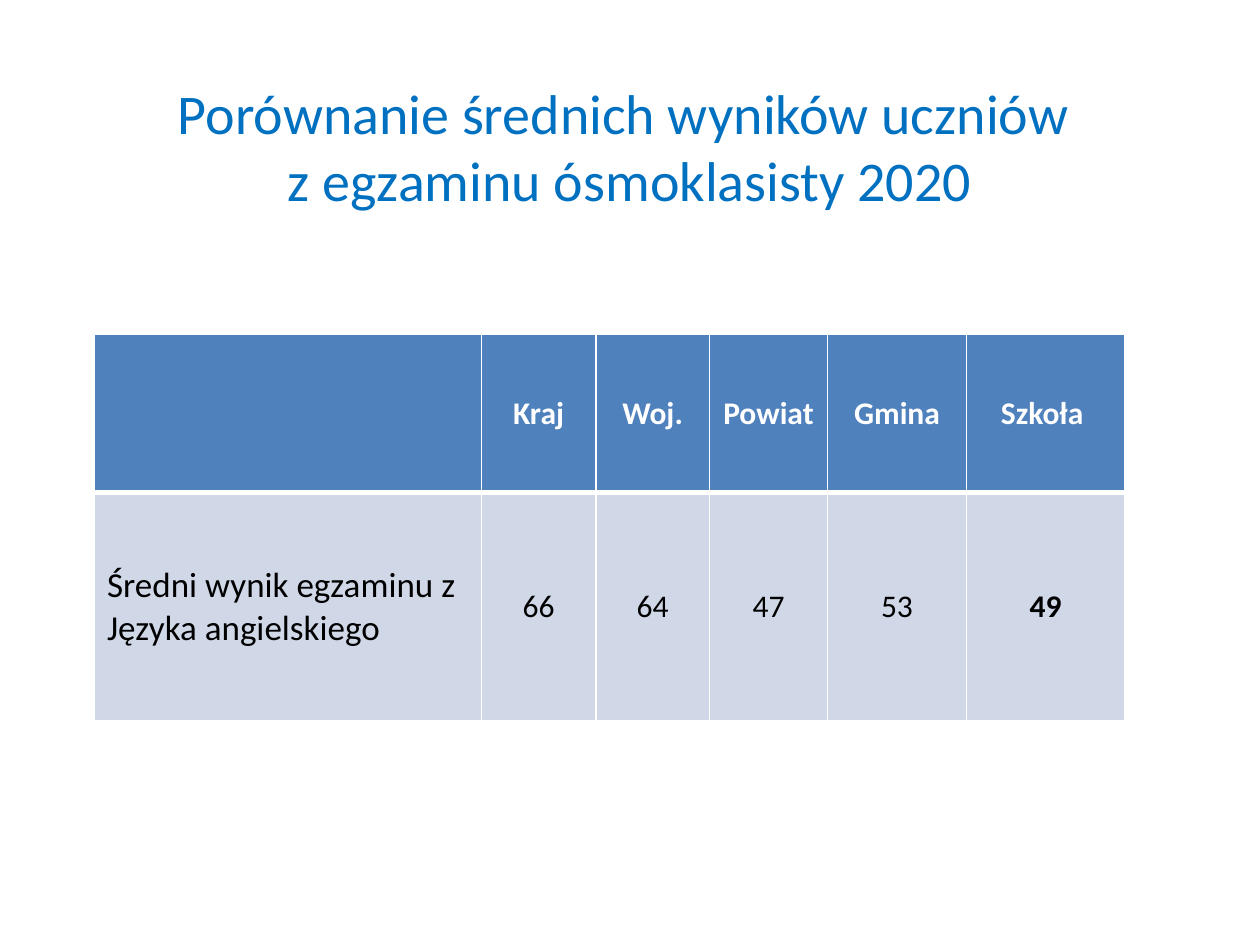
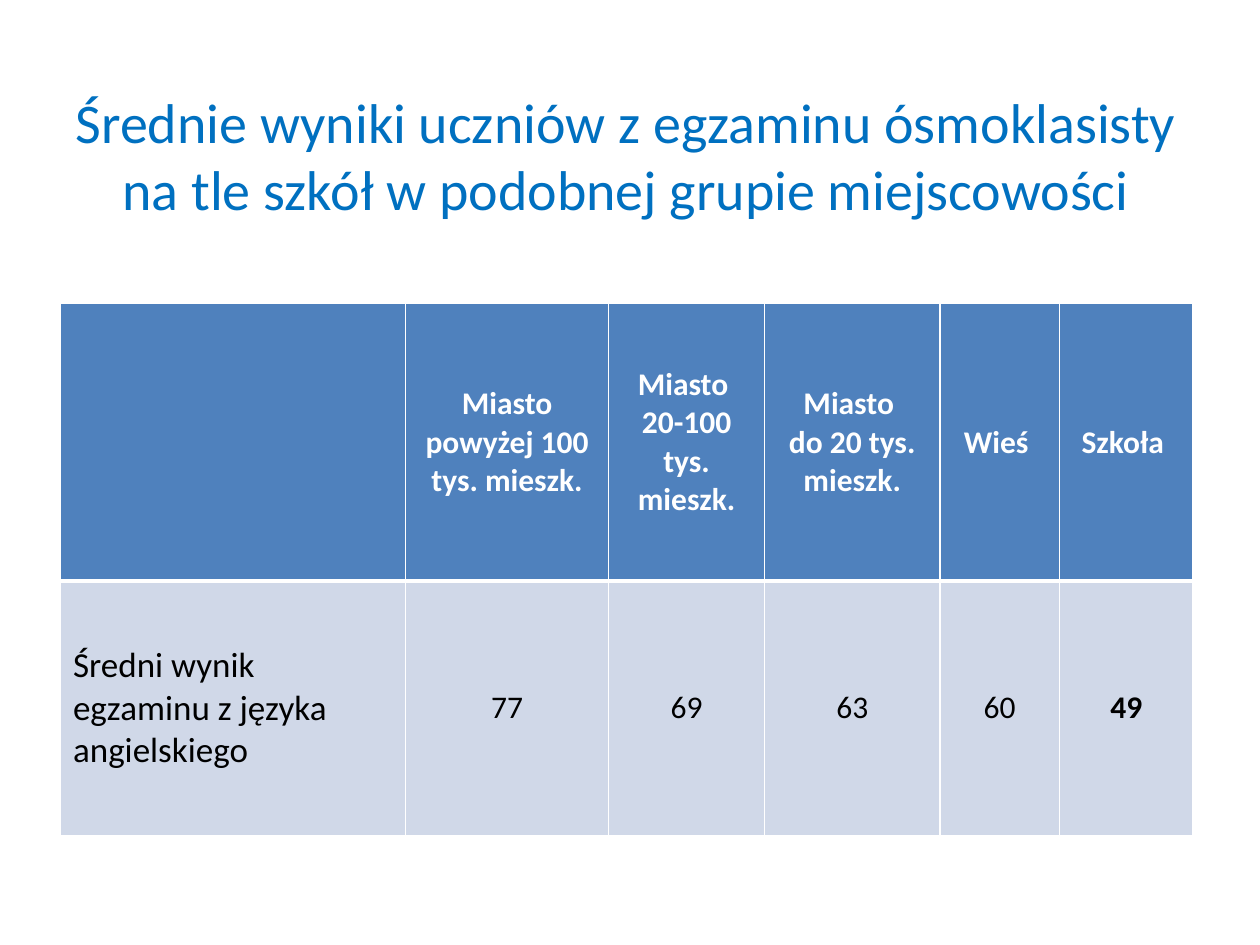
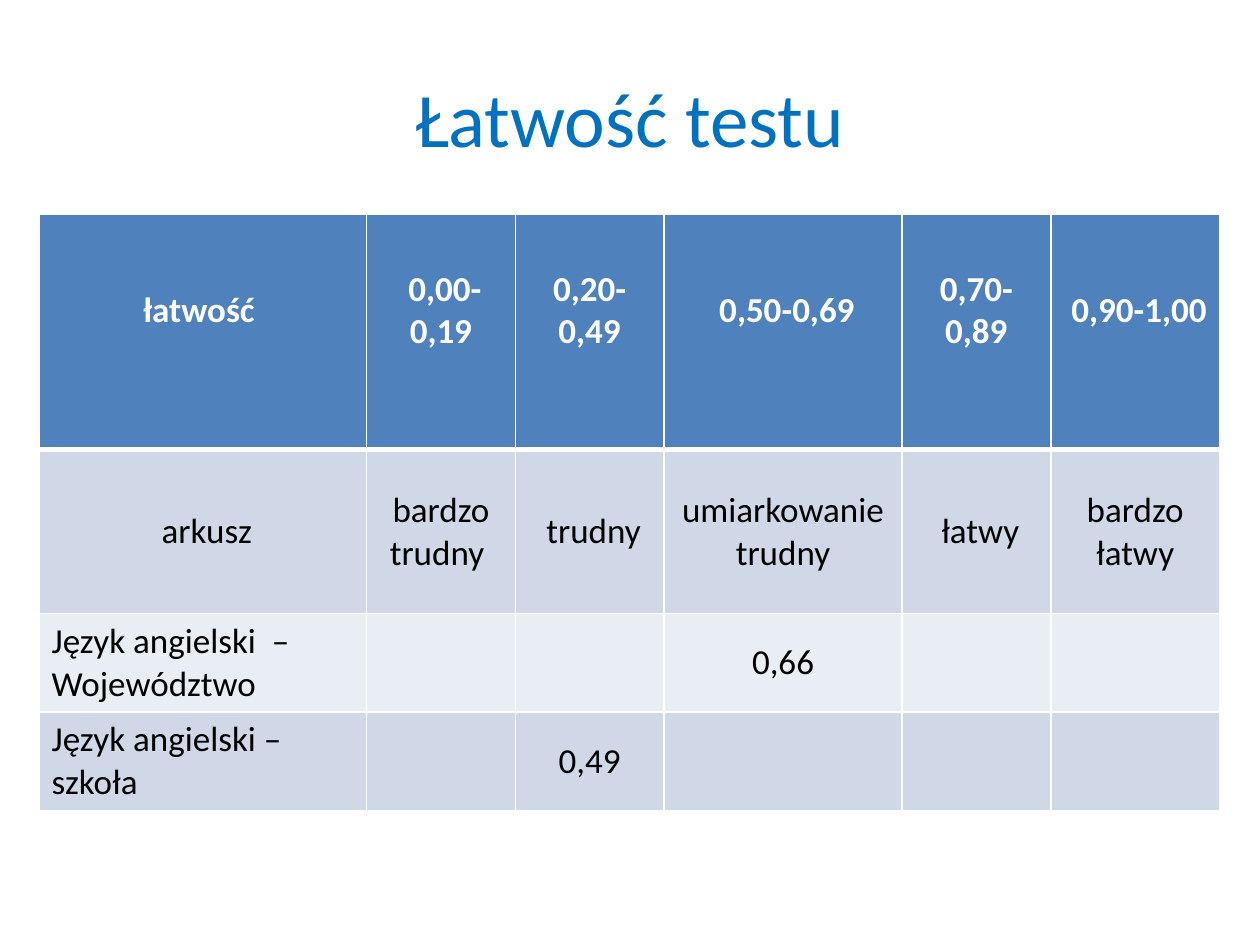
from lxml import etree
from pptx import Presentation
from pptx import util as u
from pptx.dml.color import RGBColor
from pptx.enum import text
from pptx.oxml import ns

FONT = "Calibri"
TITLE_BLUE = RGBColor(0x00, 0x70, 0xC0)
HEADER_BLUE = RGBColor(0x4F, 0x81, 0xBD)
BAND_DARK = RGBColor(0xD0, 0xD8, 0xE8)
BAND_LIGHT = RGBColor(0xE9, 0xED, 0xF4)
WHITE = RGBColor(0xFF, 0xFF, 0xFF)
BLACK = RGBColor(0x00, 0x00, 0x00)

TITLE_ONLY = 5
THIN, THICK = 1, 3


def write(frame, content, size, color, bold=False, align=text.PP_ALIGN.CENTER):
    """Fill a text frame; a vertical tab in the content breaks the line."""
    frame.text = content
    for para in frame.paragraphs:
        para.alignment = align
        for span in para.runs:
            font = span.font
            font.name, font.size, font.bold = FONT, u.Pt(size), bold
            font.color.rgb = color


def add_titled_slide(deck, title, left, top, size=32):
    page = deck.slides.add_slide(deck.slide_layouts[TITLE_ONLY])
    box = page.shapes.title
    box.left, box.top = u.Inches(left), u.Inches(top)
    box.width, box.height = u.Inches(9), u.Inches(1.25)
    write(box.text_frame, title, size, TITLE_BLUE)
    box.text_frame.auto_size = text.MSO_AUTO_SIZE.NONE
    box.text_frame.vertical_anchor = text.MSO_ANCHOR.MIDDLE
    return page


def set_borders(cell, top, bottom):
    """White rules on all sides, with the given top and bottom widths."""
    properties = cell._tc.get_or_add_tcPr()
    widths = {"lnL": THIN, "lnR": THIN, "lnT": top, "lnB": bottom}
    for side, width in widths.items():
        line = etree.SubElement(properties, ns.qn(f"a:{side}"), w=str(u.Pt(width)))
        fill = etree.SubElement(line, ns.qn("a:solidFill"))
        etree.SubElement(fill, ns.qn("a:srgbClr"), val=str(WHITE))


def add_results_table(page, left, top, widths, heights, rows,
                      size=18, label_size=20, bold_cells=()):
    """Header row, then banded rows whose first column holds the label."""
    frame = page.shapes.add_table(
        len(rows), len(widths), u.Inches(left), u.Inches(top),
        u.Inches(sum(widths)), u.Inches(sum(heights)))
    table = frame.table
    for column, width in zip(table.columns, widths):
        column.width = u.Inches(width)
    for row, height in zip(table.rows, heights):
        row.height = u.Inches(height)

    for r, values in enumerate(rows):
        header = r == 0
        band = HEADER_BLUE if header else (BAND_LIGHT, BAND_DARK)[r % 2]
        for c, value in enumerate(values):
            cell = table.cell(r, c)
            set_borders(cell, THICK if r == 1 else THIN, THICK if header else THIN)
            cell.fill.solid()
            cell.fill.fore_color.rgb = band
            cell.vertical_anchor = text.MSO_ANCHOR.MIDDLE
            if not value:
                continue
            label = c == 0 and value.startswith(("Średni", "Język"))
            write(cell.text_frame, value, label_size if label else size,
                  WHITE if header else BLACK, header or (r, c) in bold_cells,
                  text.PP_ALIGN.LEFT if label else text.PP_ALIGN.CENTER)
    return table


def main():
    deck = Presentation()
    deck.slide_width, deck.slide_height = u.Inches(10), u.Inches(7.5)

    # Averages by area
    page = add_titled_slide(
        deck, "Porównanie średnich wyników uczniów \vz egzaminu ósmoklasisty 2020",
        0.5, 0.53)
    add_results_table(
        page, 0.75, 2.65, [3.07, 0.91, 0.9, 0.94, 1.1, 1.26], [1.26, 1.81],
        [["", "Kraj", "Woj.", "Powiat", "Gmina", "Szkoła "],
         ["Średni wynik egzaminu z Języka angielskiego",
          "66", "64", "47", "53", "49"]],
        bold_cells=[(1, 5)])

    # Averages by size of town
    page = add_titled_slide(
        deck, "Średnie wyniki uczniów z egzaminu ósmoklasisty "
        "na tle szkół w podobnej grupie miejscowości", 0.47, 0.6)
    add_results_table(
        page, 0.48, 2.41, [2.74, 1.61, 1.24, 1.39, 0.95, 1.06], [2.2, 2.02],
        [["", "Miasto powyżej 100 tys. mieszk.", "Miasto \v20-100 tys. mieszk.",
          "Miasto \vdo 20 tys. mieszk.", "Wieś ", "Szkoła "],
         ["Średni wynik egzaminu z języka angielskiego",
          "77", "69", "63", "60", "49"]],
        bold_cells=[(1, 5)])

    # Easiness of the test
    page = add_titled_slide(deck, "Łatwość testu", 0.5, 0.3, size=44)
    table = add_results_table(
        page, 0.31, 1.7, [2.6, 1.18, 1.18, 1.89, 1.18, 1.34],
        [1.87, 1.3, 0.74, 0.74],
        [["łatwość ", " 0,00-0,19", "0,20-0,49", " 0,50-0,69", "0,70-0,89",
          " 0,90-1,00"],
         [" arkusz", "bardzo trudny ", " trudny", "umiarkowanie trudny",
          " łatwy", "bardzo łatwy"],
         ["Język angielski  – Województwo", "", "", "0,66", "", ""],
         ["Język angielski – szkoła", "", "0,49", "", "", ""]],
        size=20)
    # The header text sits a little above the middle
    for cell in table.rows[0].cells:
        cell.margin_bottom = u.Inches(0.39)

    deck.save("out.pptx")


if __name__ == "__main__":
    main()
